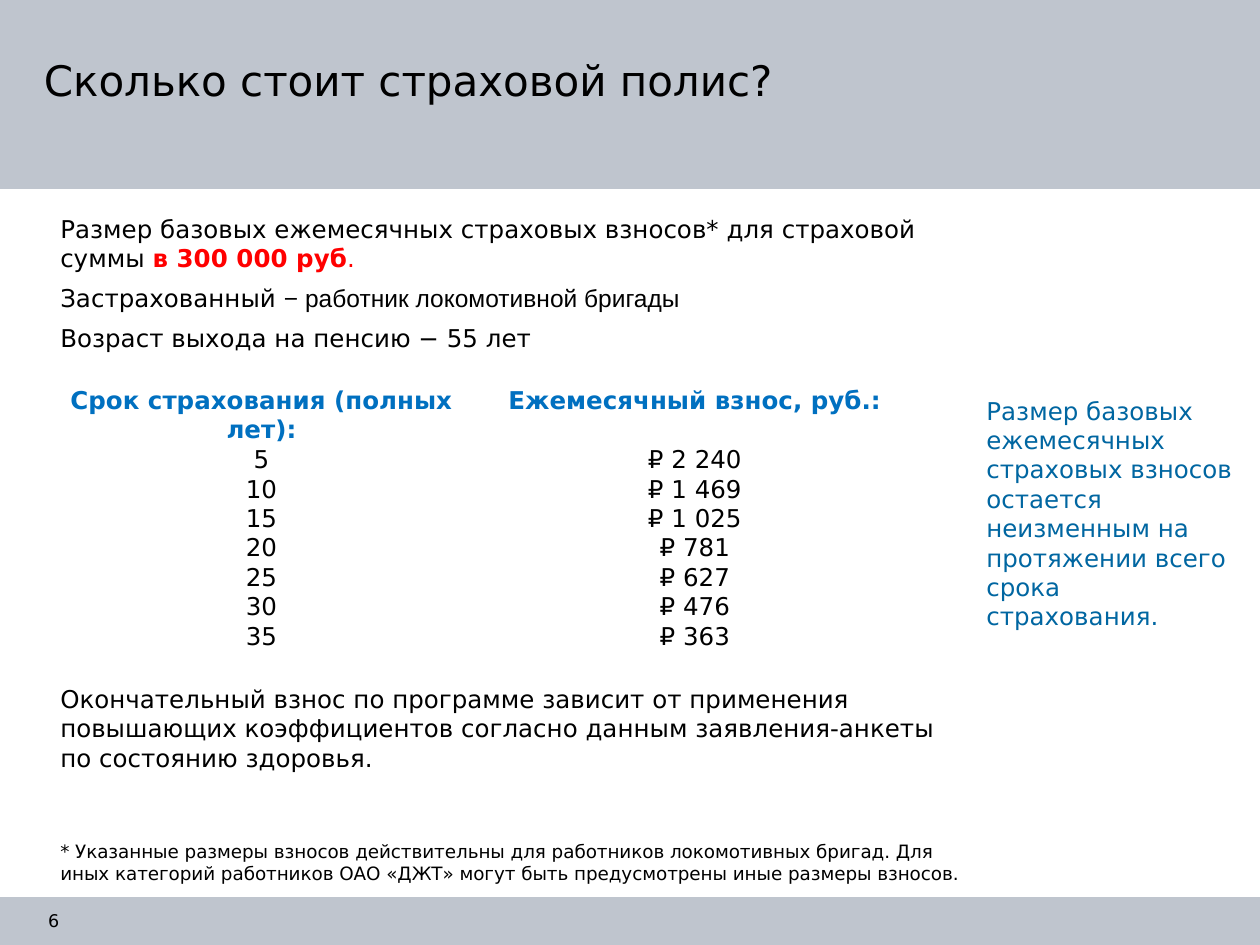
import pptx
import pptx.dml.color
import pptx.enum.shapes
import pptx.enum.text
import pptx.util

Inches = pptx.util.Inches
ALIGN = pptx.enum.text.PP_ALIGN
ANCHOR = pptx.enum.text.MSO_ANCHOR

FONT = "DejaVu Sans"
BLACK, RED, BLUE, NOTE_BLUE, BAND = "000000", "FF0000", "0070C0", "0066A1", "BFC5CE"

ROWS = [
    ("Срок страхования (полных лет):", "Ежемесячный взнос, руб.:"),
    ("5", "₽ 2 240"),
    ("10", "₽ 1 469"),
    ("15", "₽ 1 025"),
    ("20", "₽ 781"),
    ("25", "₽ 627"),
    ("30", "₽ 476"),
    ("35", "₽ 363"),
]
CONDITIONS = [
    [("Размер базовых ежемесячных страховых взносов* для страховой суммы ", {}),
     ("в 300 000 руб", {"color": RED, "bold": True}),
     (".", {"color": RED})],
    [("Застрахованный ", {}),
     ("− работник локомотивной бригады", {"name": "Arial"})],
    [("Возраст выхода на пенсию − 55 лет", {})],
]


def rgb(color):
    return pptx.dml.color.RGBColor.from_string(color)


def style_font(font, size=14, color=BLACK, bold=False, name=FONT):
    font.name = name
    font.size = pptx.util.Pt(size)
    font.bold = bold
    font.color.rgb = rgb(color)


def set_margins(holder, horizontal, vertical):
    holder.margin_left = holder.margin_right = Inches(horizontal)
    holder.margin_top = holder.margin_bottom = Inches(vertical)


def add_band(slide, top, height):
    shape = slide.shapes.add_shape(
        pptx.enum.shapes.MSO_SHAPE.RECTANGLE, 0, Inches(top), Inches(10), Inches(height))
    shape.shadow.inherit = False
    shape.fill.solid()
    shape.fill.fore_color.rgb = rgb(BAND)
    shape.line.fill.background()


def add_text(slide, box, paragraphs, size=14, color=BLACK):
    """Add a text box; each paragraph is a list of (text, font changes) runs."""
    text_frame = slide.shapes.add_textbox(*map(Inches, box)).text_frame
    text_frame.word_wrap = True
    for index, runs in enumerate(paragraphs):
        paragraph = text_frame.add_paragraph() if index else text_frame.paragraphs[0]
        paragraph.space_after = pptx.util.Pt(6)
        for text, changes in runs:
            run = paragraph.add_run()
            run.text = text
            style_font(run.font, **{"size": size, "color": color, **changes})
    return text_frame


def add_page_number(slide, number):
    text_frame = add_text(slide, (0.22, 7.22, 0.25, 0.17), [[(number, {})]], size=10)
    set_margins(text_frame, 0, 0)
    text_frame.vertical_anchor = ANCHOR.MIDDLE
    text_frame.paragraphs[0].space_after = 0
    text_frame.paragraphs[0].alignment = ALIGN.RIGHT


def add_payment_table(slide):
    table = slide.shapes.add_table(
        len(ROWS), 2, Inches(0.47), Inches(3.07), Inches(6.88), Inches(2.1)).table
    table.horz_banding = False
    for column, width in zip(table.columns, (3.21, 3.67)):
        column.width = Inches(width)
    for row_index, values in enumerate(ROWS):
        is_header = row_index == 0
        table.rows[row_index].height = Inches(0.45 if is_header else 0.23)
        for cell, value in zip(table.rows[row_index].cells, values):
            set_margins(cell, 0.07, 0)
            cell.fill.background()
            cell.text_frame.text = value
            paragraph = cell.text_frame.paragraphs[0]
            paragraph.alignment = ALIGN.CENTER
            style_font(paragraph.runs[0].font,
                       color=BLUE if is_header else BLACK, bold=is_header)


def main():
    presentation = pptx.Presentation()
    presentation.slide_width, presentation.slide_height = Inches(10), Inches(7.5)
    slide = presentation.slides.add_slide(presentation.slide_layouts[6])

    add_band(slide, 0, 1.5)
    add_band(slide, 7.12, 0.38)
    add_page_number(slide, "6")
    add_text(slide, (0.25, 0.38, 9.34, 0.83),
             [[("Сколько стоит страховой полис?", {})]], size=24)
    add_text(slide, (0.38, 1.65, 7.22, 1.3), CONDITIONS)
    add_payment_table(slide)
    add_text(slide, (0.38, 5.38, 7.22, 0.9),
             [[("Окончательный взнос по программе зависит от применения повышающих "
                "коэффициентов согласно данным заявления-анкеты по состоянию здоровья.", {})]])
    add_text(slide, (7.73, 3.09, 2.15, 2.11),
             [[("Размер базовых ежемесячных страховых взносов остается неизменным "
                "на протяжении всего срока страхования.", {})]], color=NOTE_BLUE)
    add_text(slide, (0.38, 6.62, 7.35, 0.45),
             [[("* Указанные размеры взносов действительны для работников локомотивных бригад. "
                "Для иных категорий работников ОАО «ДЖТ» могут быть предусмотрены иные "
                "размеры взносов.", {})]], size=10.5)

    presentation.save("out.pptx")


if __name__ == "__main__":
    main()
